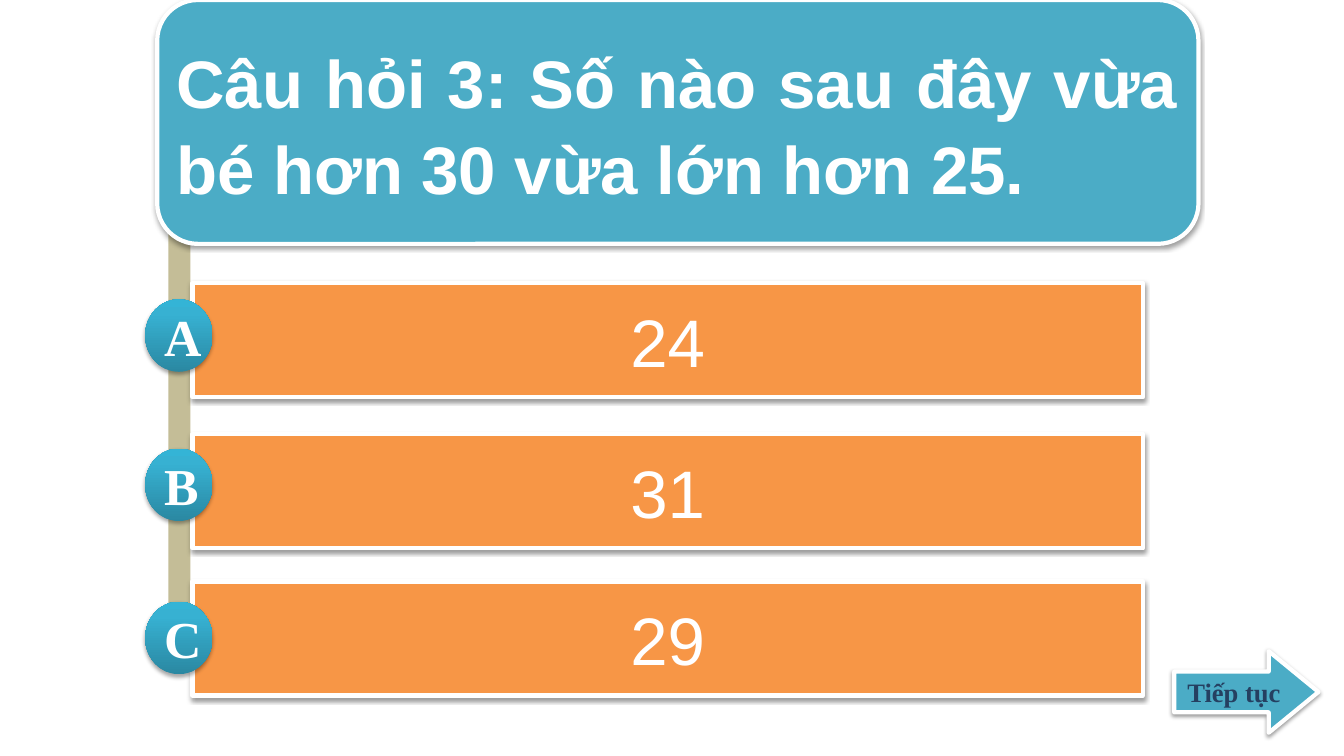
from dataclasses import dataclass

from lxml.etree import SubElement
from pptx import Presentation
from pptx.dml.color import RGBColor
from pptx.enum.shapes import MSO_SHAPE
from pptx.enum.text import MSO_ANCHOR, MSO_AUTO_SIZE, PP_ALIGN
from pptx.oxml import parse_xml
from pptx.oxml.ns import nsdecls, qn
from pptx.shapes.autoshape import Shape
from pptx.slide import Slide
from pptx.util import Pt

COLORS = {
    "white": "FFFFFF",
    "teal": "4BACC6",
    "orange": "F79646",
    "tan": "C4BD97",
    "navy": "254061",
    "shadow": "000000",
}
BADGE_STOPS = ((0, "2A88A2"), (80, "37B1D2"), (100, "34B4D6"))


@dataclass
class Box:
    left: float
    top: float
    width: float
    height: float


@dataclass
class Answer:
    letter: str
    text: str
    bar_top: float
    badge_top: float


ANSWERS = [
    Answer("A", "24", 202.3, 213.8),
    Answer("B", "31", 310.3, 320.4),
    Answer("C", "29", 415.4, 429.8),
]


def rgb(name: str) -> RGBColor:
    return RGBColor.from_string(COLORS[name])


def add_shadow(sp: Shape, alpha: int, distance: float) -> None:
    effects = sp._element.spPr.find(qn("a:effectLst"))
    shadow = SubElement(effects, qn("a:outerShdw"), blurRad=str(Pt(3.1)),
                        dist=str(Pt(distance)), dir="5400000", rotWithShape="0")
    color = SubElement(shadow, qn("a:srgbClr"), val=COLORS["shadow"])
    SubElement(color, qn("a:alpha"), val=str(alpha * 1000))


def add_plain(slide: Slide, kind: MSO_SHAPE, box: Box, fill: str) -> Shape:
    """Add a filled shape with neither outline nor shadow."""
    sp = slide.shapes.add_shape(kind, Pt(box.left), Pt(box.top),
                                Pt(box.width), Pt(box.height))
    sp.shadow.inherit = False
    sp.fill.solid()
    sp.fill.fore_color.rgb = rgb(fill)
    sp.line.fill.background()
    return sp


def add_framed(slide: Slide, kind: MSO_SHAPE, box: Box, fill: str) -> Shape:
    """Add a filled shape with a white outline and a soft shadow."""
    sp = add_plain(slide, kind, box, fill)
    sp.line.color.rgb = rgb("white")
    sp.line.width = Pt(3)
    add_shadow(sp, 38, 1.6)
    return sp


def add_badge(slide: Slide, box: Box) -> Shape:
    """Add a circle shaded from dark at the bottom to light at the top."""
    sp = add_plain(slide, MSO_SHAPE.OVAL, box, "teal")
    stops = "".join(f'<a:gs pos="{pos * 1000}"><a:srgbClr val="{color}"/></a:gs>'
                    for pos, color in BADGE_STOPS)
    gradient = parse_xml(f'<a:gradFill {nsdecls("a")} rotWithShape="1">'
                         f'<a:gsLst>{stops}</a:gsLst>'
                         '<a:lin ang="16200000" scaled="0"/></a:gradFill>')
    spPr = sp._element.spPr
    spPr.replace(spPr.find(qn("a:solidFill")), gradient)
    add_shadow(sp, 35, 1.8)
    return sp


def set_text(sp: Shape, text: str, font: str, size: float, color: str = "white",
             bold: bool = False, align: PP_ALIGN = PP_ALIGN.CENTER,
             anchor: MSO_ANCHOR = MSO_ANCHOR.MIDDLE) -> None:
    tf = sp.text_frame
    tf.text = text
    tf.word_wrap = True
    tf.auto_size = MSO_AUTO_SIZE.NONE
    tf.vertical_anchor = anchor
    p = tf.paragraphs[0]
    p.alignment = align
    p.font.name = font
    p.font.size = Pt(size)
    p.font.bold = bold
    p.font.color.rgb = rgb(color)


def place_question(slide: Slide, text: str) -> None:
    title = slide.shapes.title
    title.left, title.top = Pt(118.8), Pt(21.6)
    title.width, title.height = Pt(730.1), Pt(123.8)
    set_text(title, text, "Arial", 48, bold=True, align=PP_ALIGN.JUSTIFY,
             anchor=MSO_ANCHOR.TOP)
    title.text_frame.paragraphs[0].line_spacing = 1.07
    # Bring the title in front of its card.
    title._element.getparent().append(title._element)


def main() -> None:
    prs = Presentation()
    prs.slide_width, prs.slide_height = Pt(960), Pt(540)
    slide = prs.slides.add_slide(prs.slide_layouts[5])

    add_plain(slide, MSO_SHAPE.RECTANGLE, Box(120.2, 157.7, 15.8, 303.8), "tan")
    add_framed(slide, MSO_SHAPE.ROUNDED_RECTANGLE, Box(112.3, 0, 743.8, 174.2), "teal")

    for answer in ANSWERS:
        bar = add_framed(slide, MSO_SHAPE.RECTANGLE,
                         Box(137.5, answer.bar_top, 679, 81.4), "orange")
        set_text(bar, answer.text, "Arial", 48)
        badge = add_badge(slide, Box(103.7, answer.badge_top, 48.2, 51.8))
        set_text(badge, answer.letter, "Times New Roman", 37, bold=True)

    place_question(slide, "Câu hỏi 3: Số nào sau đây vừa bé hơn 30 vừa lớn hơn 25.")

    arrow = add_framed(slide, MSO_SHAPE.RIGHT_ARROW, Box(838.8, 465.1, 103, 58.3), "teal")
    arrow.adjustments[0] = 0.5
    arrow.adjustments[1] = 0.61
    set_text(arrow, "Tiếp tục", "Times New Roman", 19, "navy", bold=True)

    prs.save("out.pptx")


if __name__ == "__main__":
    main()
